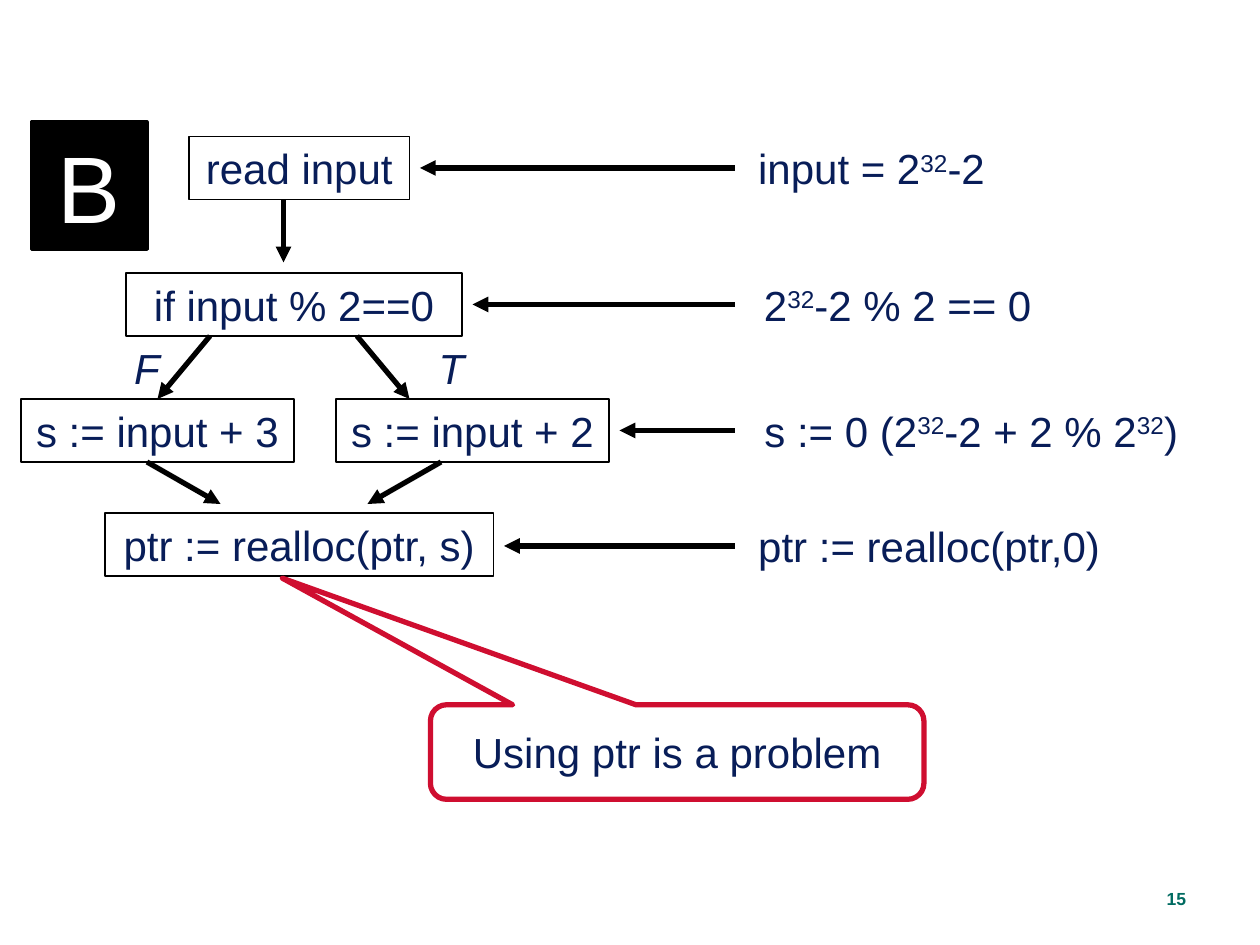
from dataclasses import dataclass
from typing import Optional

from lxml import etree
from pptx import Presentation
from pptx.dml.color import RGBColor
from pptx.enum.shapes import MSO_CONNECTOR, MSO_SHAPE
from pptx.enum.text import MSO_ANCHOR, PP_ALIGN
from pptx.oxml.ns import qn
from pptx.util import Pt

EMU_PER_PX = 9525
STRAIGHT = MSO_CONNECTOR.STRAIGHT
RECTANGLE = MSO_SHAPE.RECTANGLE
CALLOUT = MSO_SHAPE.ROUNDED_RECTANGULAR_CALLOUT
TOP, MIDDLE = MSO_ANCHOR.TOP, MSO_ANCHOR.MIDDLE
CENTER, RIGHT = PP_ALIGN.CENTER, PP_ALIGN.RIGHT
TOP_SITE = 0


@dataclass(frozen=True)
class Theme:
    font: str = "Arial"
    ink: str = "081D58"
    black: str = "000000"
    white: str = "FFFFFF"
    warning: str = "CF0E30"
    number: str = "006B61"
    body_size: int = 24
    badge_size: int = 54
    number_size: int = 10
    thin: int = 1
    medium: int = 2
    thick: int = 3


THEME = Theme()


@dataclass(frozen=True)
class Area:
    left: int
    top: int
    width: int
    height: int = 48

    def emu(self) -> tuple:
        return tuple(px(side) for side in (self.left, self.top, self.width, self.height))


@dataclass(frozen=True)
class Style:
    color: str = THEME.ink
    size: int = THEME.body_size
    bold: bool = False
    italic: bool = False
    align: PP_ALIGN = CENTER
    anchor: MSO_ANCHOR = TOP


@dataclass(frozen=True)
class Node:
    text: str
    area: Area
    style: Style = Style()
    line: str = THEME.black
    width: int = THEME.thin
    fill: Optional[str] = None
    kind: MSO_SHAPE = RECTANGLE
    adjustments: tuple = ()


@dataclass(frozen=True)
class Label:
    wording: tuple
    area: Area
    style: Style = Style()


@dataclass(frozen=True)
class Arrow:
    start: tuple
    end: tuple
    target: Optional[str] = None


BRANCH = Style(italic=True)
BADGE = Style(color=THEME.white, size=THEME.badge_size, anchor=MIDDLE)
NUMBER = Style(color=THEME.number, size=THEME.number_size, bold=True, align=RIGHT)

NODES = (
    Node("read input", Area(144, 104, 168)),
    Node("if input % 2==0", Area(96, 208, 256)),
    Node("s := input + 3", Area(16, 304, 208)),
    Node("s := input + 2", Area(256, 304, 208)),
    Node("ptr := realloc(ptr, s)", Area(80, 391, 296)),
    Node("B", Area(24, 93, 88, 97), BADGE, width=THEME.medium, fill=THEME.black),
    Node("Using ptr is a problem", Area(328, 537, 376, 72), Style(anchor=MIDDLE),
         THEME.warning, THEME.thick, kind=CALLOUT, adjustments=(-0.8, -1.84, 0.17)),
)

LABELS = (
    Label(("F",), Area(88, 256, 48), BRANCH),
    Label(("T",), Area(320, 256, 48), BRANCH),
    Label(("input = 2", "32", "-2"), Area(552, 104, 224)),
    Label(("2", "32", "-2 % 2 == 0"), Area(568, 208, 232)),
    Label(("s := 0 (2", "32", "-2 + 2 % 2", "32", ")"), Area(568, 304, 344)),
    Label(("ptr := realloc(ptr,0)",), Area(536, 392, 344)),
    Label(("15",), Area(728, 672, 185, 24), NUMBER),
)

FLOW_ARROWS = (
    Arrow((216, 152), (216, 200)),
    Arrow((160, 256), (120, 304), "s := input + 3"),
    Arrow((272, 256), (312, 304)),
    Arrow((112, 352), (168, 384)),
    Arrow((336, 352), (280, 384)),
)
TRACE_START = 560
TRACE_ENDS = ((320, 128), (360, 232), (472, 328), (384, 416))
TRACE_ARROWS = tuple(Arrow((TRACE_START, y), (x, y)) for x, y in TRACE_ENDS)


def px(length: int) -> int:
    return length * EMU_PER_PX


def rgb(color: str) -> RGBColor:
    return RGBColor.from_string(color)


def write_text(shape, wording: tuple, style: Style) -> None:
    frame = shape.text_frame
    frame.word_wrap = True
    frame.vertical_anchor = style.anchor
    para = frame.paragraphs[0]
    para.alignment = style.align
    for index, words in enumerate(wording):
        span = para.add_run()
        span.text = words
        span.font.name = THEME.font
        span.font.size = Pt(style.size)
        span.font.bold = style.bold
        span.font.italic = style.italic
        span.font.color.rgb = rgb(style.color)
        if index % 2:
            span.font._element.set("baseline", "30000")


def draw_node(page, node: Node):
    box = page.shapes.add_shape(node.kind, *node.area.emu())
    box.shadow.inherit = False
    for index, value in enumerate(node.adjustments):
        box.adjustments[index] = value
    if node.fill:
        box.fill.solid()
        box.fill.fore_color.rgb = rgb(node.fill)
    else:
        box.fill.background()
    box.line.color.rgb = rgb(node.line)
    box.line.width = Pt(node.width)
    write_text(box, (node.text,), node.style)
    return box


def draw_label(page, label: Label) -> None:
    box = page.shapes.add_textbox(*label.area.emu())
    write_text(box, label.wording, label.style)


def draw_arrow(page, arrow: Arrow, boxes: dict) -> None:
    ends = (px(value) for value in arrow.start + arrow.end)
    connector = page.shapes.add_connector(STRAIGHT, *ends)
    connector.line.color.rgb = rgb(THEME.black)
    connector.line.width = Pt(THEME.thick)
    properties = connector._element.spPr
    etree.SubElement(properties.find(qn("a:ln")), qn("a:tailEnd"), type="triangle")
    etree.SubElement(properties, qn("a:effectLst"))
    if arrow.target:
        connector.end_connect(boxes[arrow.target], TOP_SITE)


def main() -> None:
    deck = Presentation()
    deck.slide_width, deck.slide_height = px(960), px(720)
    page = deck.slides.add_slide(deck.slide_layouts[6])
    boxes = {node.text: draw_node(page, node) for node in NODES}
    for label in LABELS:
        draw_label(page, label)
    for arrow in FLOW_ARROWS + TRACE_ARROWS:
        draw_arrow(page, arrow, boxes)
    deck.save("out.pptx")


if __name__ == "__main__":
    main()
